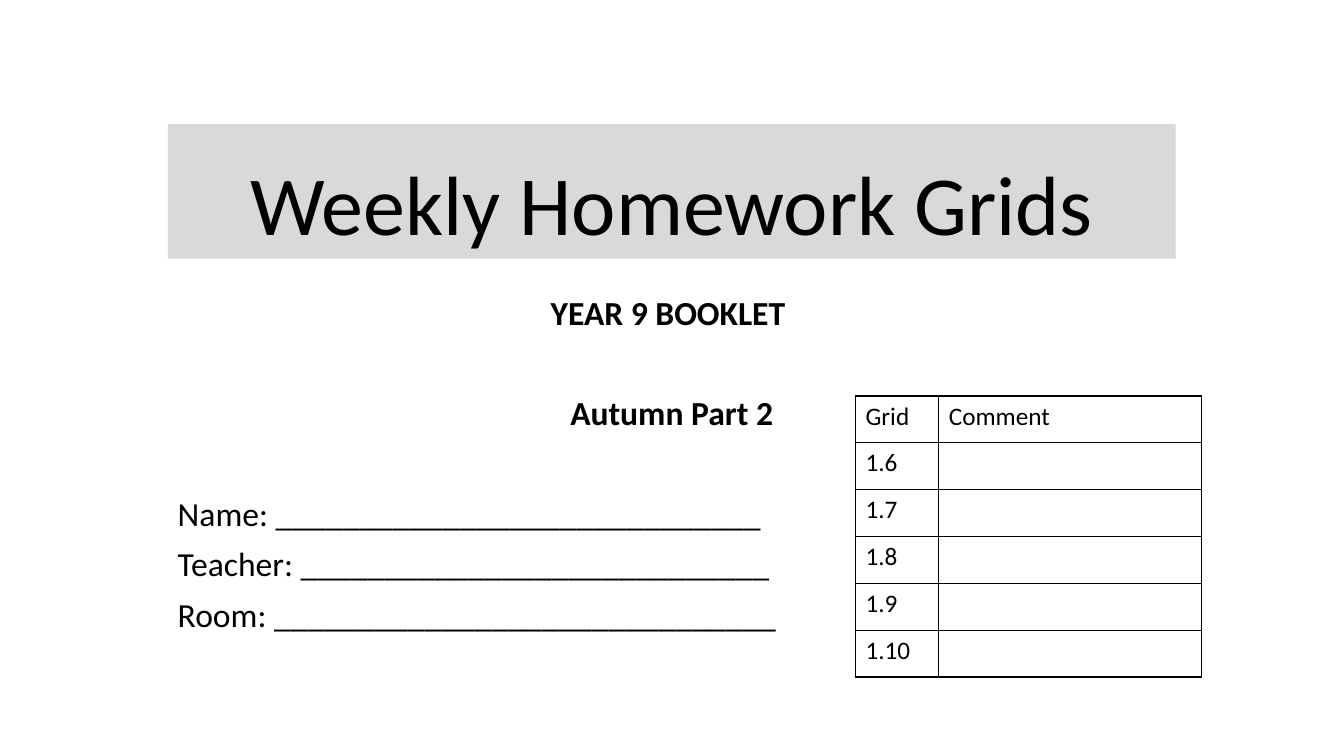
from lxml import etree
from pptx import Presentation
from pptx import util as u
from pptx.dml.color import RGBColor
from pptx.enum import shapes, text
from pptx.oxml import ns

BLACK = RGBColor(0, 0, 0)
GREY = RGBColor(0xD9, 0xD9, 0xD9)
CENTER, LEFT = text.PP_ALIGN.CENTER, text.PP_ALIGN.LEFT

TITLE = "Weekly Homework Grids"
COVER_LINES = [
    ("YEAR 9 BOOKLET ", True, CENTER, 10),
    ("Autumn Part 2", True, CENTER, 46),
    ("Name: " + "_" * 29, False, LEFT, 46),
    ("Teacher: " + "_" * 28, False, LEFT, 10),
    ("Room: " + "_" * 30, False, LEFT, 10),
]
GRID_ROWS = [("Grid", "Comment"), ("1.6", ""), ("1.7", ""),
             ("1.8", ""), ("1.9", ""), ("1.10 ", "")]

COVER_LEFT, COVER_WIDTH = u.Cm(4.23), u.Cm(25.4)
TITLE_TOP, TITLE_HEIGHT = u.Cm(3.12), u.Cm(3.4)
LINES_TOP, LINES_HEIGHT = u.Cm(7.34), u.Cm(9.42)
GRID_LEFT, GRID_TOP = u.Cm(21.56), u.Cm(9.98)
COLUMN_WIDTHS = [u.Cm(2.1), u.Cm(6.62)]
ROW_HEIGHT = u.Cm(1.18)

TITLE_FORMAT = {"size": u.Pt(60), "bold": False}
LINE_FORMAT = {"size": u.Pt(24)}
GRID_FORMAT = {"size": u.Pt(18), "bold": False}


def set_all(target, values):
    for name, value in values.items():
        setattr(target, name, value)


def write(paragraph, words, font_format, **layout):
    paragraph.text = words
    set_all(paragraph, layout)
    set_all(paragraph.font, {"name": "Calibri", **font_format})
    paragraph.font.color.rgb = BLACK


def outline(cell):
    properties = cell._tc.get_or_add_tcPr()
    for position, side in enumerate(("lnL", "lnR", "lnT", "lnB")):
        line = etree.Element(ns.qn("a:" + side), w=str(u.Pt(1)))
        fill = etree.SubElement(line, ns.qn("a:solidFill"))
        etree.SubElement(fill, ns.qn("a:srgbClr"), val=str(BLACK))
        properties.insert(position, line)


booklet = Presentation()
set_all(booklet, {"slide_width": u.Cm(33.87), "slide_height": u.Cm(19.05)})
cover = booklet.slides.add_slide(booklet.slide_layouts[6])

title = cover.shapes.add_shape(shapes.MSO_SHAPE.RECTANGLE, COVER_LEFT, TITLE_TOP,
                               COVER_WIDTH, TITLE_HEIGHT)
title.shadow.inherit = False
title.fill.solid()
title.fill.fore_color.rgb = GREY
title.line.fill.background()
set_all(title.text_frame, {"word_wrap": True, "vertical_anchor": text.MSO_ANCHOR.BOTTOM})
write(title.text_frame.paragraphs[0], TITLE, TITLE_FORMAT,
      alignment=CENTER, line_spacing=0.9)

details = cover.shapes.add_textbox(COVER_LEFT, LINES_TOP, COVER_WIDTH, LINES_HEIGHT).text_frame
details.word_wrap = True
for number, (words, bold, alignment, gap) in enumerate(COVER_LINES):
    paragraph = details.add_paragraph() if number else details.paragraphs[0]
    write(paragraph, words, {**LINE_FORMAT, "bold": bold},
          alignment=alignment, line_spacing=0.9, space_before=u.Pt(gap))

grid = cover.shapes.add_table(len(GRID_ROWS), len(COLUMN_WIDTHS), GRID_LEFT, GRID_TOP,
                              sum(COLUMN_WIDTHS), ROW_HEIGHT * len(GRID_ROWS)).table
set_all(grid, {"first_row": False, "horz_banding": False})
for column, width in zip(grid.columns, COLUMN_WIDTHS):
    column.width = width
for row, entries in zip(grid.rows, GRID_ROWS):
    row.height = ROW_HEIGHT
    for cell, entry in zip(row.cells, entries):
        cell.fill.background()
        outline(cell)
        write(cell.text_frame.paragraphs[0], entry, GRID_FORMAT)

booklet.save("out.pptx")
